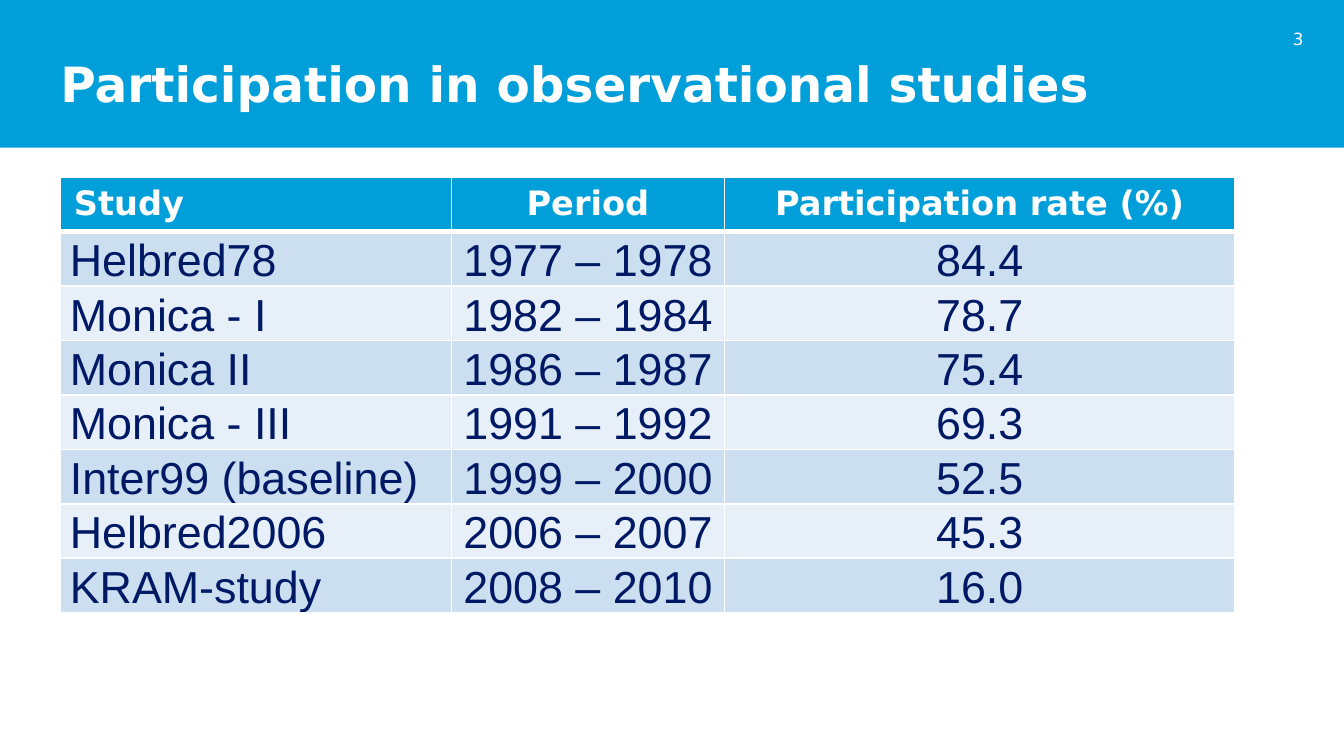
from dataclasses import dataclass

import pptx
import pptx.dml.color
import pptx.enum.shapes
import pptx.enum.text
import pptx.oxml
import pptx.oxml.ns
import pptx.util
from pptx.util import Inches

SLIDE_WIDTH = 10
SLIDE_HEIGHT = SLIDE_WIDTH * 9 / 16
BLUE = "009FDA"
NAVY = "001965"
WHITE = "FFFFFF"
BANDS = ("CCDFF1", "E7F0F8")
ALIGN = pptx.enum.text.PP_ALIGN
ANCHOR = pptx.enum.text.MSO_ANCHOR


@dataclass
class TextStyle:
    font: str
    size: int
    color: str
    bold: bool = False


@dataclass
class CellStyle:
    text: TextStyle
    side_margin: float
    end_margin: float
    anchor: ANCHOR


@dataclass
class Study:
    name: str
    period: str
    rate: str


TITLE = TextStyle("DejaVu Sans", 26, WHITE, True)
NUMBER = TextStyle("DejaVu Sans", 9, WHITE)
HEADER = CellStyle(TextStyle("DejaVu Sans", 18, WHITE, True), 0.1, 0.05, ANCHOR.TOP)
BODY = CellStyle(TextStyle("Arial", 24, NAVY), 0.07, 0, ANCHOR.BOTTOM)

COLUMN_WIDTHS = (2.91, 2.03, 3.8)
TABLE_HEIGHT = 3.24
HEADINGS = Study("Study", "Period", "Participation rate (%)")
STUDIES = [
    Study("Helbred78", "1977 – 1978", "84.4"),
    Study("Monica - I", "1982 – 1984", "78.7"),
    Study("Monica II", "1986 – 1987", "75.4"),
    Study("Monica - III", "1991 – 1992", "69.3"),
    Study("Inter99 (baseline)", "1999 – 2000", "52.5"),
    Study("Helbred2006", "2006 – 2007", "45.3"),
    Study("KRAM-study", "2008 – 2010", "16.0"),
]


def rgb(color: str) -> pptx.dml.color.RGBColor:
    return pptx.dml.color.RGBColor.from_string(color)


def write(text_frame, text: str, style: TextStyle, align: ALIGN) -> None:
    text_frame.text = text
    paragraph = text_frame.paragraphs[0]
    paragraph.alignment = align
    paragraph.font.name = style.font
    paragraph.font.size = pptx.util.Pt(style.size)
    paragraph.font.bold = style.bold
    paragraph.font.color.rgb = rgb(style.color)


def write_box(shape, text: str, style: TextStyle, align: ALIGN) -> None:
    text_frame = shape.text_frame
    text_frame.margin_left = text_frame.margin_right = 0
    text_frame.margin_top = text_frame.margin_bottom = 0
    text_frame.word_wrap = True
    text_frame.auto_size = pptx.enum.text.MSO_AUTO_SIZE.NONE
    text_frame.vertical_anchor = ANCHOR.MIDDLE
    write(text_frame, text, style, align)


def add_borders(cell, top: int, bottom: int) -> None:
    properties = cell._tc.get_or_add_tcPr()
    sides = {"lnL": 1, "lnR": 1, "lnT": top, "lnB": bottom}
    for index, (side, points) in enumerate(sides.items()):
        properties.insert(index, pptx.oxml.parse_xml(
            f'<a:{side} {pptx.oxml.ns.nsdecls("a")} w="{pptx.util.Pt(points)}">'
            f'<a:solidFill><a:srgbClr val="{WHITE}"/></a:solidFill></a:{side}>'))


def fill_cell(cell, text: str, style: CellStyle, fill: str, align: ALIGN) -> None:
    cell.margin_left = cell.margin_right = Inches(style.side_margin)
    cell.margin_top = cell.margin_bottom = Inches(style.end_margin)
    cell.vertical_anchor = style.anchor
    cell.fill.solid()
    cell.fill.fore_color.rgb = rgb(fill)
    write(cell.text_frame, text, style.text, align)


def add_band(slide) -> None:
    band = slide.shapes.add_shape(
        pptx.enum.shapes.MSO_SHAPE.RECTANGLE, 0, 0, Inches(10.02), Inches(1.1))
    band.shadow.inherit = False
    band.fill.solid()
    band.fill.fore_color.rgb = rgb(BLUE)
    band.line.fill.background()
    slide.shapes.title.element.addprevious(band.element)


def add_title(slide) -> None:
    title = slide.shapes.title
    title.left, title.top = Inches(0.45), Inches(0.37)
    title.width, title.height = Inches(8.72), Inches(0.55)
    write_box(title, "Participation in observational studies", TITLE, ALIGN.LEFT)
    title.text_frame.paragraphs[0].line_spacing = 0.9


def add_study_table(slide) -> None:
    rows = [HEADINGS, *STUDIES]
    table = slide.shapes.add_table(
        len(rows), len(COLUMN_WIDTHS), Inches(0.45), Inches(1.32),
        Inches(sum(COLUMN_WIDTHS)), Inches(TABLE_HEIGHT)).table
    for column, width in zip(table.columns, COLUMN_WIDTHS):
        column.width = Inches(width)
    for row, study in enumerate(rows):
        style = BODY if row else HEADER
        fill = BANDS[(row - 1) % 2] if row else BLUE
        for column, text in enumerate((study.name, study.period, study.rate)):
            cell = table.cell(row, column)
            align = ALIGN.CENTER if column else ALIGN.LEFT
            fill_cell(cell, text, style, fill, align)
            add_borders(cell, 3 if row == 1 else 1, 3 if row == 0 else 1)


def main() -> None:
    presentation = pptx.Presentation()
    presentation.slide_width = Inches(SLIDE_WIDTH)
    presentation.slide_height = Inches(SLIDE_HEIGHT)
    slide = presentation.slides.add_slide(presentation.slide_layouts[5])
    add_band(slide)
    add_title(slide)
    add_study_table(slide)
    number = slide.shapes.add_textbox(
        Inches(9.39), Inches(0.21), Inches(0.31), Inches(0.16))
    write_box(number, "3", NUMBER, ALIGN.RIGHT)
    presentation.save("out.pptx")


if __name__ == "__main__":
    main()
